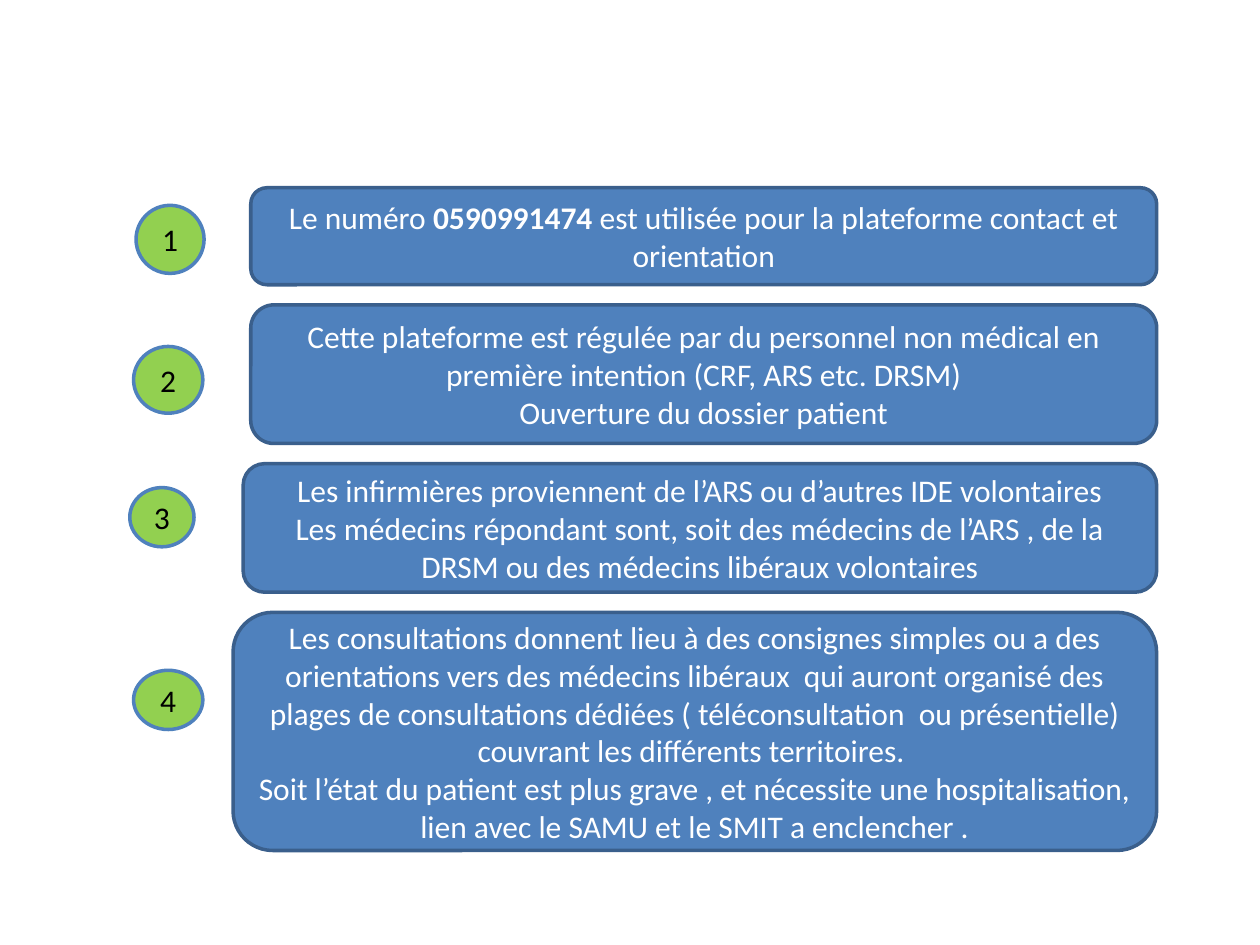
from dataclasses import dataclass

from pptx import Presentation
from pptx import util as u
from pptx.dml.color import RGBColor
from pptx.enum import shapes, text


@dataclass(frozen=True)
class Theme:
    font: str = "Calibri"
    size: int = 18
    line_width: int = 2
    card: str = "4F81BD"
    card_line: str = "3A5F8C"
    card_text: str = "FFFFFF"
    badge: str = "92D050"
    badge_line: str = "4F81BD"
    badge_text: str = "000000"


THEME = Theme()
WIDTH, HEIGHT = 10, 7.5
FIRST_TOP = 1.49
GAP = 0.16
RIGHT = 9.18

STEPS = [
    {
        "card": (1.99, 0.77),
        "badge": (1.08, 1.63, 0.54, 0.54),
        "lines": [[
            ("Le numéro ", False),
            ("0590991474", True),
            (" est utilisée pour la plateforme contact et orientation", False),
        ]],
    },
    {
        "card": (1.99, 1.1),
        "badge": (1.06, 2.75, 0.55, 0.53),
        "lines": [
            [("Cette plateforme est régulée par du personnel non médical en "
              "première intention (CRF, ARS etc. DRSM)", False)],
            [("Ouverture du dossier patient", False)],
        ],
    },
    {
        "card": (1.93, 1.02),
        "badge": (1.03, 3.87, 0.51, 0.47),
        "lines": [
            [("Les infirmières proviennent de l’ARS ou d’autres IDE volontaires", False)],
            [("Les médecins répondant sont, soit des médecins de l’ARS , de la "
              "DRSM ou des médecins libéraux volontaires", False)],
        ],
    },
    {
        "card": (1.85, 1.89),
        "badge": (1.06, 5.32, 0.55, 0.47),
        "lines": [
            [("Les consultations donnent lieu à des consignes simples ou a des "
              "orientations vers des médecins libéraux  qui auront organisé des "
              "plages de consultations dédiées ( téléconsultation  ou présentielle) "
              "couvrant les différents territoires. ", False)],
            [("Soit l’état du patient est plus grave , et nécessite une "
              "hospitalisation, lien avec le SAMU et le SMIT a enclencher .", False)],
        ],
    },
]


def add_box(slide, kind, box, fill, line, color, lines):
    sp = slide.shapes.add_shape(kind, *(u.Inches(v) for v in box))
    sp.shadow.inherit = False
    sp.fill.solid()
    sp.fill.fore_color.rgb = RGBColor.from_string(fill)
    sp.line.color.rgb = RGBColor.from_string(line)
    sp.line.width = u.Pt(THEME.line_width)
    tf = sp.text_frame
    tf.word_wrap = True
    tf.vertical_anchor = text.MSO_ANCHOR.MIDDLE
    for i, runs in enumerate(lines):
        p = tf.add_paragraph() if i else tf.paragraphs[0]
        p.alignment = text.PP_ALIGN.CENTER
        p.font.name = THEME.font
        p.font.size = u.Pt(THEME.size)
        p.font.color.rgb = RGBColor.from_string(color)
        for words, bold in runs:
            r = p.add_run()
            r.text = words
            r.font.color.rgb = RGBColor.from_string(color)
            if bold:
                r.font.bold = True


def add_badge(slide, number, box):
    add_box(slide, shapes.MSO_SHAPE.FLOWCHART_CONNECTOR, box, THEME.badge,
            THEME.badge_line, THEME.badge_text, [[(str(number), False)]])


def add_card(slide, box, lines):
    add_box(slide, shapes.MSO_SHAPE.ROUNDED_RECTANGLE, box, THEME.card,
            THEME.card_line, THEME.card_text, lines)


def main():
    prs = Presentation()
    prs.slide_width, prs.slide_height = u.Inches(WIDTH), u.Inches(HEIGHT)
    slide = prs.slides.add_slide(prs.slide_layouts[6])
    top = FIRST_TOP
    for number, step in enumerate(STEPS, 1):
        left, height = step["card"]
        add_badge(slide, number, step["badge"])
        add_card(slide, (left, top, RIGHT - left, height), step["lines"])
        top += height + GAP
    prs.save("out.pptx")


if __name__ == "__main__":
    main()
